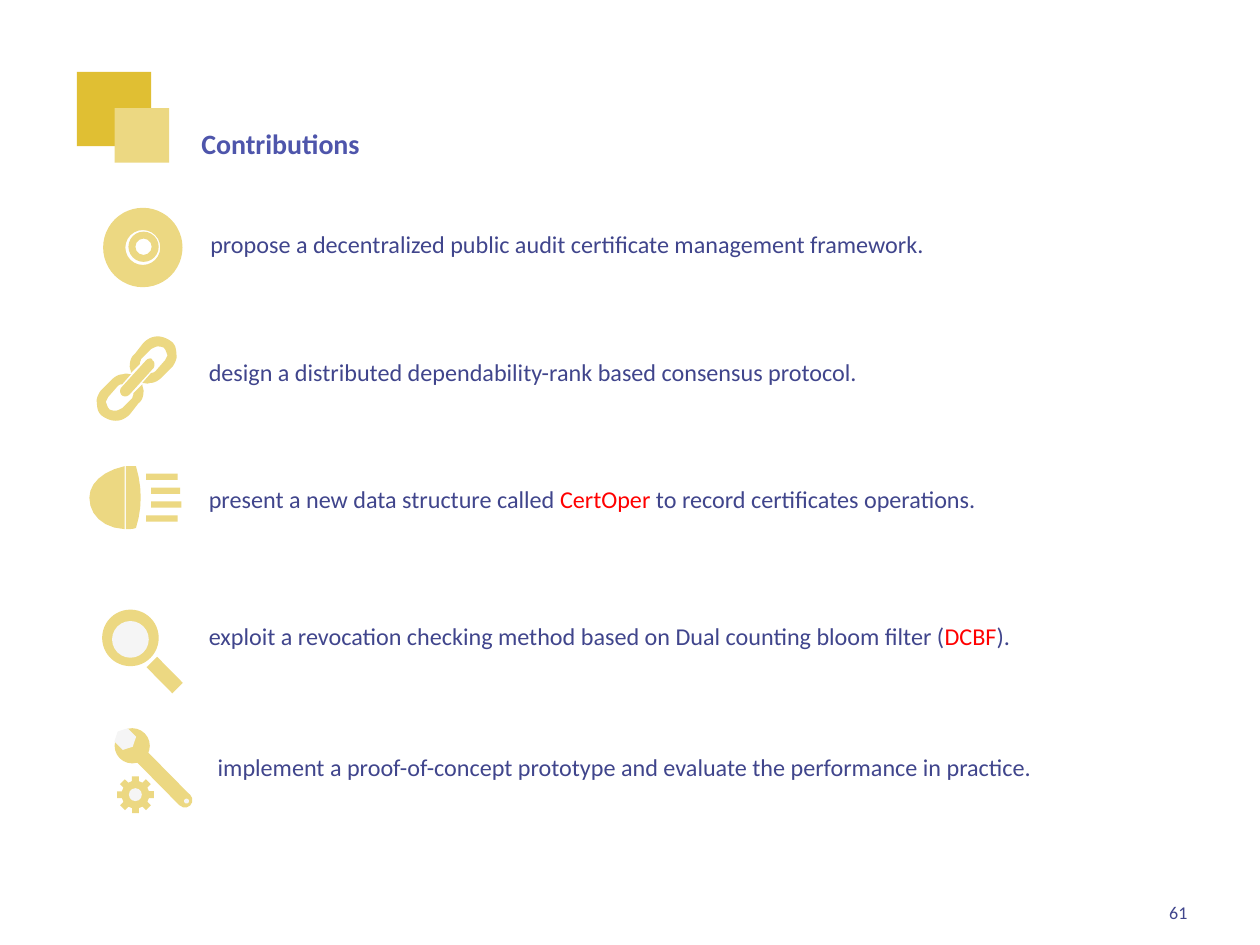
from math import cos, radians, sin

from pptx import Presentation
from pptx.dml.color import RGBColor
from pptx.enum.shapes import MSO_SHAPE
from pptx.enum.text import MSO_ANCHOR, PP_ALIGN
from pptx.util import Cm, Pt

GOLD, SAND, PALE = "E0BF33", "ECD882", "F5F5F5"
TITLE, BODY, RED = "4E55AB", "40458C", "FF0000"
UNIT = 0.0254

prs = Presentation()
prs.slide_width, prs.slide_height = Cm(25.4), Cm(19.05)
slide = prs.slides.add_slide(prs.slide_layouts[6])
shapes = slide.shapes


def paint(shape, color):
    shape.shadow.inherit = False
    shape.fill.solid()
    shape.fill.fore_color.rgb = RGBColor.from_string(color)
    shape.line.fill.background()


def draw_outline(contours, color, steps=6):
    builder = None
    for contour in contours:
        points = [contour[0]]
        for step in contour[1:]:
            if len(step) == 2:
                points.append(step)
                continue
            controls = [points[-1], step[:2], step[2:4], step[4:]]
            for i in range(1, steps + 1):
                t = i / steps
                weights = ((1 - t) ** 3, 3 * t * (1 - t) ** 2, 3 * t * t * (1 - t), t ** 3)
                points.append(tuple(sum(w * p[axis] for w, p in zip(weights, controls))
                                    for axis in (0, 1)))
        points = [(Cm(x * UNIT), Cm(y * UNIT)) for x, y in points]
        if builder is None:
            builder = shapes.build_freeform(*points[0])
        else:
            builder.move_to(*points[0])
        builder.add_line_segments(points[1:], close=True)
    paint(builder.convert_to_shape(), color)


RECT, OVAL, RING = MSO_SHAPE.RECTANGLE, MSO_SHAPE.OVAL, MSO_SHAPE.DONUT
corner_squares = [(RECT, 1.55, 1.45, 1.5, 1.5, 0, GOLD), (RECT, 2.31, 2.18, 1.1, 1.1, 0, SAND)]
disc = [(RING, 2.08, 4.19, 1.6, 1.6, 0, SAND), (RING, 2.59, 4.67, 0.61, 0.61, 0, SAND)]
magnifier = [
    (OVAL, 2.06, 12.29, 1.14, 1.14, 0, SAND),
    (OVAL, 2.26, 12.52, 0.74, 0.74, 0, PALE),
    (RECT, 2.95, 13.46, 0.74, 0.3, 45.4, SAND),
]
gear_x, gear_y, gear_radius = 2.73, 16.02, 0.29
gear = [(OVAL, gear_x - 0.28, gear_y - 0.28, 0.56, 0.56, 0, SAND)]
for angle in range(0, 360, 45):
    tooth_x = gear_x + gear_radius * sin(radians(angle))
    tooth_y = gear_y - gear_radius * cos(radians(angle))
    gear.append((RECT, tooth_x - 0.07, tooth_y - 0.08, 0.14, 0.16, angle, SAND))
gear.append((OVAL, gear_x - 0.13, gear_y - 0.13, 0.26, 0.26, 0, PALE))
wrench = [
    (OVAL, 3.58, 15.98, 0.3, 0.3, 45.4, SAND),
    (OVAL, 2.31, 14.68, 0.71, 0.71, 45.4, SAND),
    (RECT, 2.67, 15.54, 1.24, 0.3, 45.4, SAND),
    (MSO_SHAPE.HEXAGON, 2.31, 14.71, 0.43, 0.38, 45.4, PALE),
    (OVAL, 3.71, 16.1, 0.1, 0.1, 45.4, PALE),
]
for preset, left, top, width, height, rotation, color in (
        corner_squares + disc + magnifier + gear + wrench):
    part = shapes.add_shape(preset, Cm(left), Cm(top), Cm(width), Cm(height))
    part.rotation = rotation
    if preset == RING:
        part.adjustments[0] = 0.28 if width > 1 else 0.23
    paint(part, color)

lower_link = [
    (113, 305), (113, 307, 114, 309, 114, 310), (114, 314, 113, 318, 110, 320),
    (103, 329), (100, 332, 96, 334, 92, 334), (89, 334, 85, 333, 81, 330),
    (78, 328, 77, 324, 77, 320), (76, 317, 78, 313, 80, 310),
    (88, 302), (91, 299, 94, 297, 98, 297), (100, 296, 102, 297, 104, 297),
    (97, 305), (95, 305, 94, 306, 93, 307), (86, 315),
    (85, 317, 84, 319, 84, 319), (85, 321, 85, 323, 87, 325),
    (89, 326, 91, 326, 92, 326), (93, 326, 95, 325, 97, 324),
    (105, 316), (105, 315, 106, 314, 106, 312),
]
upper_link = [tuple((601 if i % 2 else 217) - value for i, value in enumerate(step))
              for step in lower_link]
middle_bar = [
    (121, 286), (121, 284, 118, 284, 116, 286), (96, 308),
    (95, 310, 95, 312, 97, 314), (99, 315, 101, 315, 103, 313),
    (122, 292), (123, 290, 123, 287, 121, 286),
]
draw_outline([lower_link, upper_link, middle_bar], SAND)

lamp = [(99, 420), (81, 419, 71, 408, 71, 395), (71, 384, 81, 374, 99, 370)]
lens = [(108, 370), (113, 387, 113, 403, 108, 419), (106, 420, 103, 420, 100, 420),
        (100, 370), (103, 370, 106, 370, 108, 370)]
beams = [[(left, top), (right, top), (right, top + 5), (left, top + 5)]
         for left, right, top in ((116, 141, 376), (120, 143, 387), (120, 144, 398), (116, 141, 409))]
draw_outline([lamp, lens] + beams, SAND)

contributions = [
    (3.99, 3.89, ["propose a decentralized public audit certificate management framework."]),
    (3.96, 6.48, ["design a distributed dependability-rank based consensus protocol."]),
    (3.96, 9.04, ["present a new data structure called ", "CertOper", " to record certificates operations."]),
    (3.96, 11.81, ["exploit a revocation checking method based on Dual counting bloom filter (", "DCBF", ")."]),
    (4.14, 14.45, ["implement a proof-of-concept prototype and evaluate the performance in practice."]),
]
texts = [(3.81, 1.78, 11.43, 1.45, ["Contributions"], 16, TITLE, MSO_ANCHOR.BOTTOM, 0, PP_ALIGN.LEFT)]
texts += [(left, top, 19.35, 2.31, runs, 13.8, BODY, MSO_ANCHOR.MIDDLE, 0.4, PP_ALIGN.JUSTIFY)
          for left, top, runs in contributions]
texts.append((23.32, 17.6, 1.9, 1.02, ["61"], 10.3, BODY, MSO_ANCHOR.BOTTOM, 0, PP_ALIGN.LEFT))

for left, top, width, height, runs, size, color, anchor, bottom, alignment in texts:
    frame = shapes.add_textbox(Cm(left), Cm(top), Cm(width), Cm(height)).text_frame
    frame.word_wrap = True
    frame.vertical_anchor = anchor
    frame.margin_bottom = Cm(bottom)
    paragraph = frame.paragraphs[0]
    paragraph.alignment = alignment
    paragraph.font.name = "Calibri"
    paragraph.font.size = Pt(size)
    paragraph.font.bold = color == TITLE
    for i, words in enumerate(runs):
        run = paragraph.add_run()
        run.text = words
        run.font.color.rgb = RGBColor.from_string(RED if i == 1 else color)

prs.save("out.pptx")
